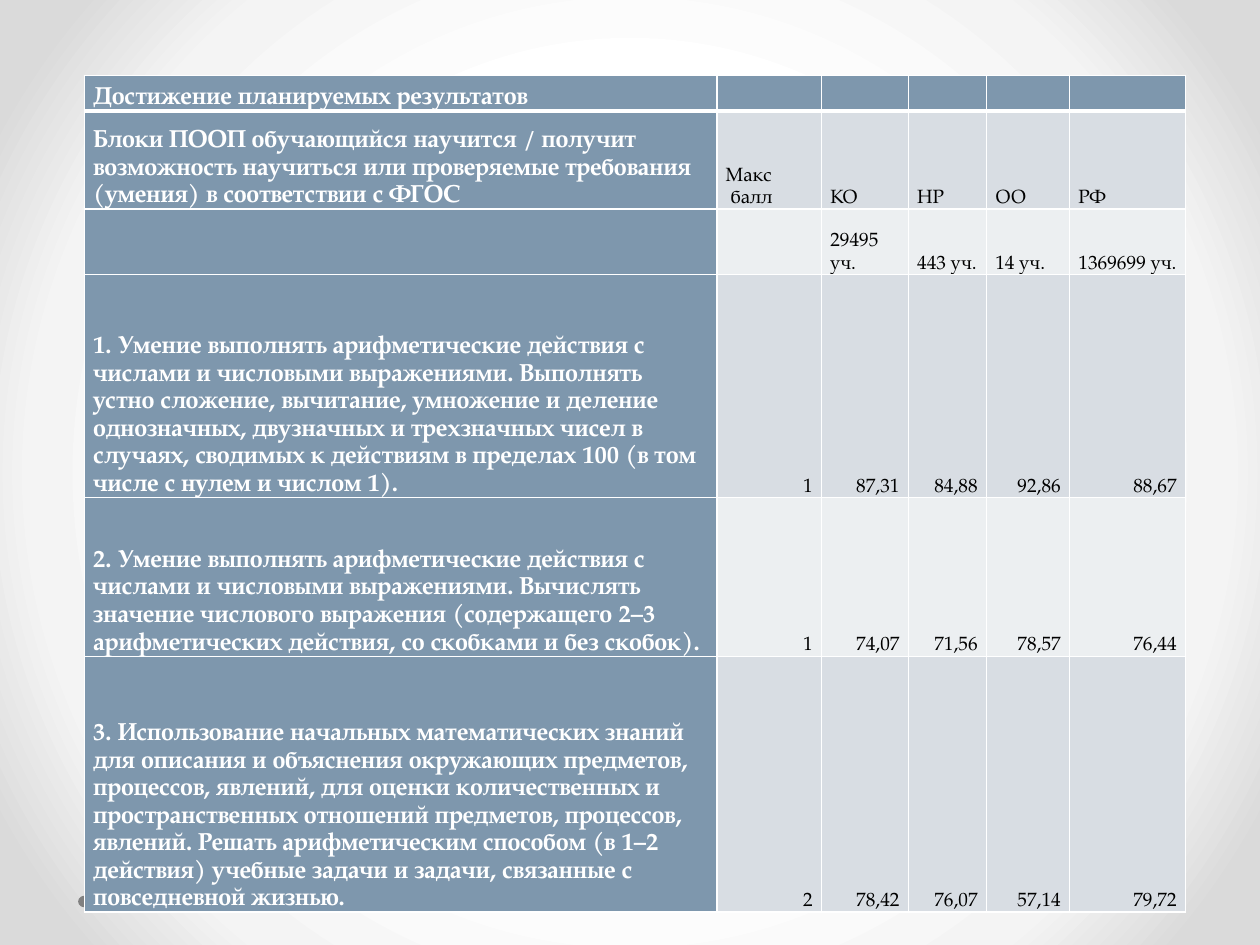
import pptx
import pptx.dml.color
import pptx.enum.shapes
import pptx.enum.text
import pptx.oxml
import pptx.oxml.ns
import pptx.util
from lxml import etree

RGBColor = pptx.dml.color.RGBColor
PP_ALIGN = pptx.enum.text.PP_ALIGN
qn = pptx.oxml.ns.qn

PX = 9144  # EMU in one px: 100 px to the inch
FONT = "TeX Gyre Pagella"
WHITE = RGBColor(0xFF, 0xFF, 0xFF)
BLACK = RGBColor(0x00, 0x00, 0x00)
GRAY = RGBColor(0x80, 0x80, 0x80)
BLUE = RGBColor(0x7E, 0x97, 0xAD)
BAND_DARK = RGBColor(0xD8, 0xDD, 0xE3)
BAND_LIGHT = RGBColor(0xEC, 0xEF, 0xF1)
BACKGROUND_STOPS = [
    (50, WHITE),
    (76, RGBColor(0xF4, 0xF4, 0xF4)),
    (92, RGBColor(0xDA, 0xDA, 0xDA)),
]

COLUMN_WIDTHS = [502, 83, 69, 62, 66, 92]
ROW_HEIGHTS = [28, 78, 52, 177, 126, 203]
FIRST_SCORE_ROW = 3
ROWS = [
    ["Достижение планируемых результатов", "", "", "", "", ""],
    ["Блоки ПООП обучающийся научится / получит возможность научиться или "
     "проверяемые требования (умения) в соответствии с ФГОС",
     "Макс\n балл", "КО", "НР", "ОО", "РФ"],
    ["", "", "29495 уч.", "443 уч.", "14 уч.", "1369699 уч."],
    ["1. Умение выполнять арифметические действия с числами и числовыми "
     "выражениями. Выполнять устно сложение, вычитание, умножение и деление "
     "однозначных, двузначных и трехзначных чисел в случаях, сводимых к "
     "действиям в пределах 100 (в том числе с нулем и числом 1).",
     "1", "87,31", "84,88", "92,86", "88,67"],
    ["2. Умение выполнять арифметические действия с числами и числовыми "
     "выражениями. Вычислять значение числового выражения (содержащего 2–3 "
     "арифметических действия, со скобками и без скобок).",
     "1", "74,07", "71,56", "78,57", "76,44"],
    ["3. Использование начальных математических знаний для описания и "
     "объяснения окружающих предметов, процессов, явлений, для оценки "
     "количественных и пространственных отношений предметов, процессов, "
     "явлений. Решать арифметическим способом (в 1–2 действия) учебные задачи "
     "и задачи, связанные с повседневной жизнью.",
     "2", "78,42", "76,07", "57,14", "79,72"],
]


def px(length):
    return pptx.util.Emu(length * PX)


def set_background(slide):
    """Fill the background with a circular gradient around the centre."""
    slide.background.fill.gradient()
    gradient = next(slide.element.iter(qn("a:gradFill")))
    for child in list(gradient):
        gradient.remove(child)
    stops = etree.SubElement(gradient, qn("a:gsLst"))
    for position, color in BACKGROUND_STOPS:
        stop = etree.SubElement(stops, qn("a:gs"), pos=str(position * 1000))
        etree.SubElement(stop, qn("a:srgbClr"), val=str(color))
    circle = etree.SubElement(gradient, qn("a:path"), path="circle")
    etree.SubElement(circle, qn("a:fillToRect"),
                     l="50000", t="50000", r="50000", b="50000")


def add_dot(slide, left, top, size):
    dot = slide.shapes.add_shape(pptx.enum.shapes.MSO_SHAPE.OVAL,
                                 px(left), px(top), px(size), px(size))
    dot.shadow.inherit = False
    dot.fill.solid()
    dot.fill.fore_color.rgb = GRAY
    dot.line.fill.background()


def set_borders(cell, bottom_width):
    properties = cell._tc.get_or_add_tcPr()
    widths = {"a:lnL": 1, "a:lnR": 1, "a:lnT": 1, "a:lnB": bottom_width}
    for index, (tag, width) in enumerate(widths.items()):
        line = etree.Element(qn(tag), w=str(pptx.util.Pt(width)))
        fill = etree.SubElement(line, qn("a:solidFill"))
        etree.SubElement(fill, qn("a:srgbClr"), val=str(WHITE))
        properties.insert(index, line)


def write_cell(cell, text, size, color, bold, alignment):
    cell.vertical_anchor = pptx.enum.text.MSO_ANCHOR.BOTTOM
    cell.margin_left = cell.margin_right = px(7)
    cell.margin_top = cell.margin_bottom = 0
    cell.text_frame.text = text
    for paragraph in cell.text_frame.paragraphs:
        paragraph.alignment = alignment
        paragraph.line_spacing = 1.15
        for run in paragraph.runs:
            run.font.name = FONT
            run.font.size = pptx.util.Pt(size)
            run.font.bold = bold
            run.font.color.rgb = color
        if not paragraph.runs:  # keeps an empty cell from stretching its row
            etree.SubElement(paragraph._p, qn("a:endParaRPr"), sz=str(size * 100))


def add_results_table(slide, left, top):
    frame = slide.shapes.add_table(len(ROWS), len(COLUMN_WIDTHS), px(left), px(top),
                                   px(sum(COLUMN_WIDTHS)), px(sum(ROW_HEIGHTS)))
    table = frame.table
    for column, width in zip(table.columns, COLUMN_WIDTHS):
        column.width = px(width)
    for row, height in zip(table.rows, ROW_HEIGHTS):
        row.height = px(height)

    for row_index, texts in enumerate(ROWS):
        band = BAND_DARK if row_index % 2 else BAND_LIGHT
        for column_index, text in enumerate(texts):
            cell = table.cell(row_index, column_index)
            is_heading = row_index == 0 or column_index == 0
            is_score = row_index >= FIRST_SCORE_ROW and column_index > 0
            cell.fill.solid()
            cell.fill.fore_color.rgb = BLUE if is_heading else band
            set_borders(cell, bottom_width=3 if row_index == 0 else 1)
            write_cell(cell, text,
                       size=14 if is_heading else 11,
                       color=WHITE if is_heading else BLACK,
                       bold=is_heading,
                       alignment=PP_ALIGN.RIGHT if is_score else PP_ALIGN.LEFT)


def main():
    presentation = pptx.Presentation()
    presentation.slide_width = px(1000)
    presentation.slide_height = px(750)
    slide = presentation.slides.add_slide(presentation.slide_layouts[6])

    set_background(slide)

    # Footer dots, partly behind the table
    for left in (925, 62):
        add_dot(slide, left, 711, 9)

    add_results_table(slide, 67, 60)
    presentation.save("out.pptx")


if __name__ == "__main__":
    main()
